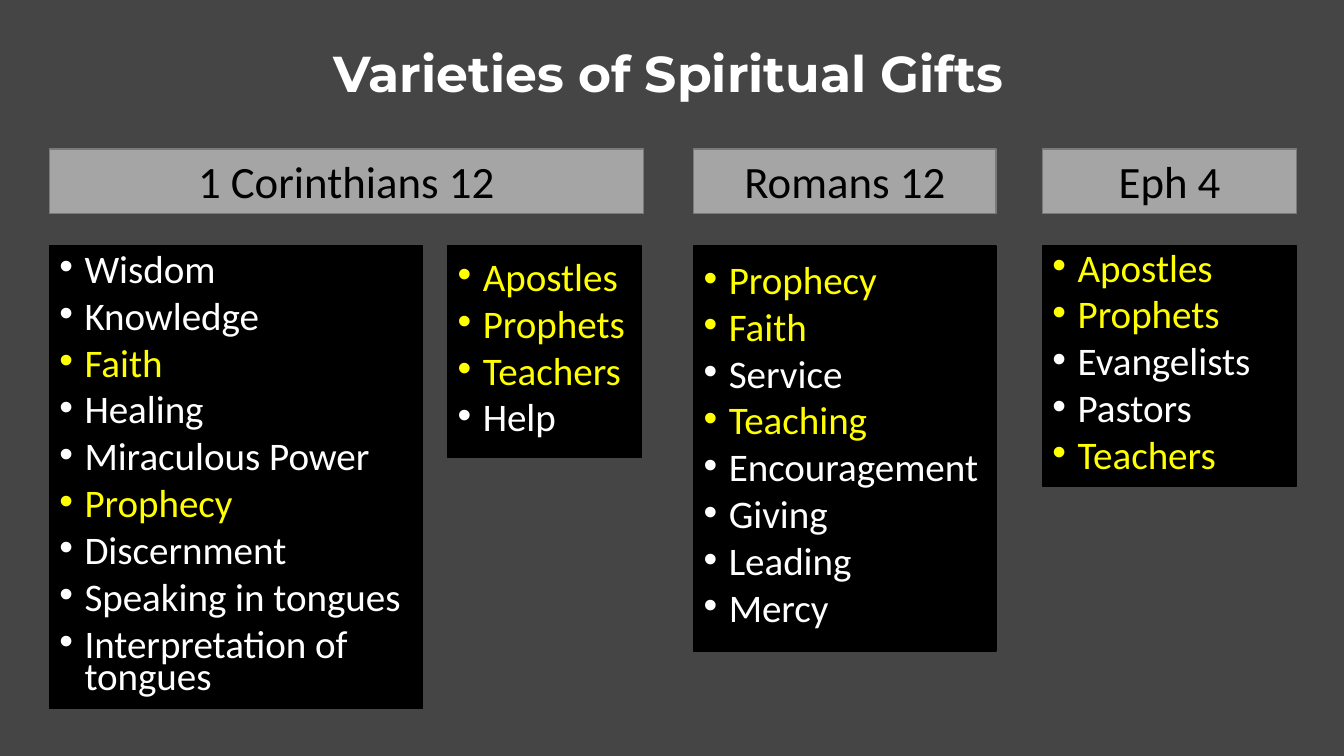
from lxml import etree
from pptx import Presentation
from pptx.dml.color import RGBColor
from pptx.enum.shapes import MSO_SHAPE
from pptx.enum.text import MSO_ANCHOR, MSO_AUTO_SIZE, PP_ALIGN
from pptx.oxml.ns import qn
from pptx.util import Inches, Pt

RECTANGLE = MSO_SHAPE.RECTANGLE
TOP, MIDDLE, BOTTOM = MSO_ANCHOR.TOP, MSO_ANCHOR.MIDDLE, MSO_ANCHOR.BOTTOM
FIT_SHAPE = MSO_AUTO_SIZE.SHAPE_TO_FIT_TEXT
LEFT, CENTER = PP_ALIGN.LEFT, PP_ALIGN.CENTER

HEADER_TOP, HEADER_HEIGHT = 1.48, 0.64
LIST_TOP = 2.44

# left, width, text
HEADERS = [
    (0.49, 5.89, "1 Corinthians 12"),
    (6.88, 3, "Romans 12"),
    (10.34, 2.52, "Eph 4"),
]

# left, width, height, gifts
GIFT_LISTS = [
    (0.49, 3.7, 4.59, ["Wisdom", "Knowledge", "Faith", "Healing", "Miraculous Power",
                       "Prophecy", "Discernment", "Speaking in tongues",
                       "Interpretation of tongues"]),
    (4.44, 1.92, 2.1, ["Apostles", "Prophets", "Teachers", "Help"]),
    (6.88, 3, 4.02, ["Prophecy", "Faith", "Service", "Teaching", "Encouragement",
                     "Giving", "Leading", "Mercy"]),
    (10.34, 2.52, 2.38, ["Apostles", "Prophets", "Evangelists", "Pastors", "Teachers"]),
]
REPEATED_GIFTS = {"Faith", "Prophecy", "Apostles", "Prophets", "Teachers", "Teaching"}


def color(hex_string):
    return RGBColor.from_string(hex_string)


class GiftSlide:
    title_font, body_font = "Montserrat", "Calibri"
    white, black, yellow = "FFFFFF", "000000", "FFFF00"
    background, header_fill, header_line = "454545", "A5A5A5", "7A7A7A"

    def __init__(self, deck):
        self.page = deck.slides.add_slide(deck.slide_layouts[6])
        fill = self.page.background.fill
        fill.solid()
        fill.fore_color.rgb = color(self.background)

    def add_span(self, para, text, font, size, text_color, bold=False):
        span = para.add_run()
        span.text = text
        span.font.name = font
        span.font.size = Pt(size)
        span.font.bold = bold
        span.font.color.rgb = color(text_color)

    def bullet(self, para):
        """Give the paragraph a round bullet with a hanging indent."""
        properties = para._p.get_or_add_pPr()
        properties.set("marL", str(Inches(0.25)))
        properties.set("indent", str(Inches(-0.25)))
        etree.SubElement(properties, qn("a:buFont")).set("typeface", "Arial")
        etree.SubElement(properties, qn("a:buChar")).set("char", "•")

    def rectangle(self, left, top, width, height, fill, line):
        box = self.page.shapes.add_shape(
            RECTANGLE, Inches(left), Inches(top), Inches(width), Inches(height))
        box.shadow.inherit = False
        box.fill.solid()
        box.fill.fore_color.rgb = color(fill)
        box.line.color.rgb = color(line)
        box.line.width = Pt(1)
        box.text_frame.word_wrap = True
        return box

    def title(self, text):
        box = self.page.shapes.add_textbox(
            Inches(1.05), Inches(0.31), Inches(11.16), Inches(0.77))
        frame = box.text_frame
        frame.word_wrap = True
        frame.vertical_anchor = BOTTOM
        para = frame.paragraphs[0]
        para.alignment = CENTER
        para.line_spacing = 0.9
        self.add_span(para, text, self.title_font, 36, self.white, bold=True)

    def header(self, left, width, text):
        box = self.rectangle(left, HEADER_TOP, width, HEADER_HEIGHT,
                             self.header_fill, self.header_line)
        frame = box.text_frame
        frame.auto_size = FIT_SHAPE
        frame.vertical_anchor = TOP
        para = frame.paragraphs[0]
        para.alignment = CENTER
        self.add_span(para, text, self.body_font, 32, self.black)

    def gift_list(self, left, width, height, gifts):
        box = self.rectangle(left, LIST_TOP, width, height, self.black, self.black)
        frame = box.text_frame
        frame.vertical_anchor = MIDDLE
        for index, gift in enumerate(gifts):
            para = frame.add_paragraph() if index else frame.paragraphs[0]
            para.alignment = LEFT
            para.line_spacing = 0.7
            para.space_before = Pt(10)
            self.bullet(para)
            text_color = self.yellow if gift in REPEATED_GIFTS else self.white
            self.add_span(para, gift, self.body_font, 27.9, text_color)


def main():
    deck = Presentation()
    deck.slide_width, deck.slide_height = Inches(13.33), Inches(7.5)
    slide = GiftSlide(deck)
    slide.title("Varieties of Spiritual Gifts")
    for header in HEADERS:
        slide.header(*header)
    for gift_list in GIFT_LISTS:
        slide.gift_list(*gift_list)
    deck.save("out.pptx")


if __name__ == "__main__":
    main()
